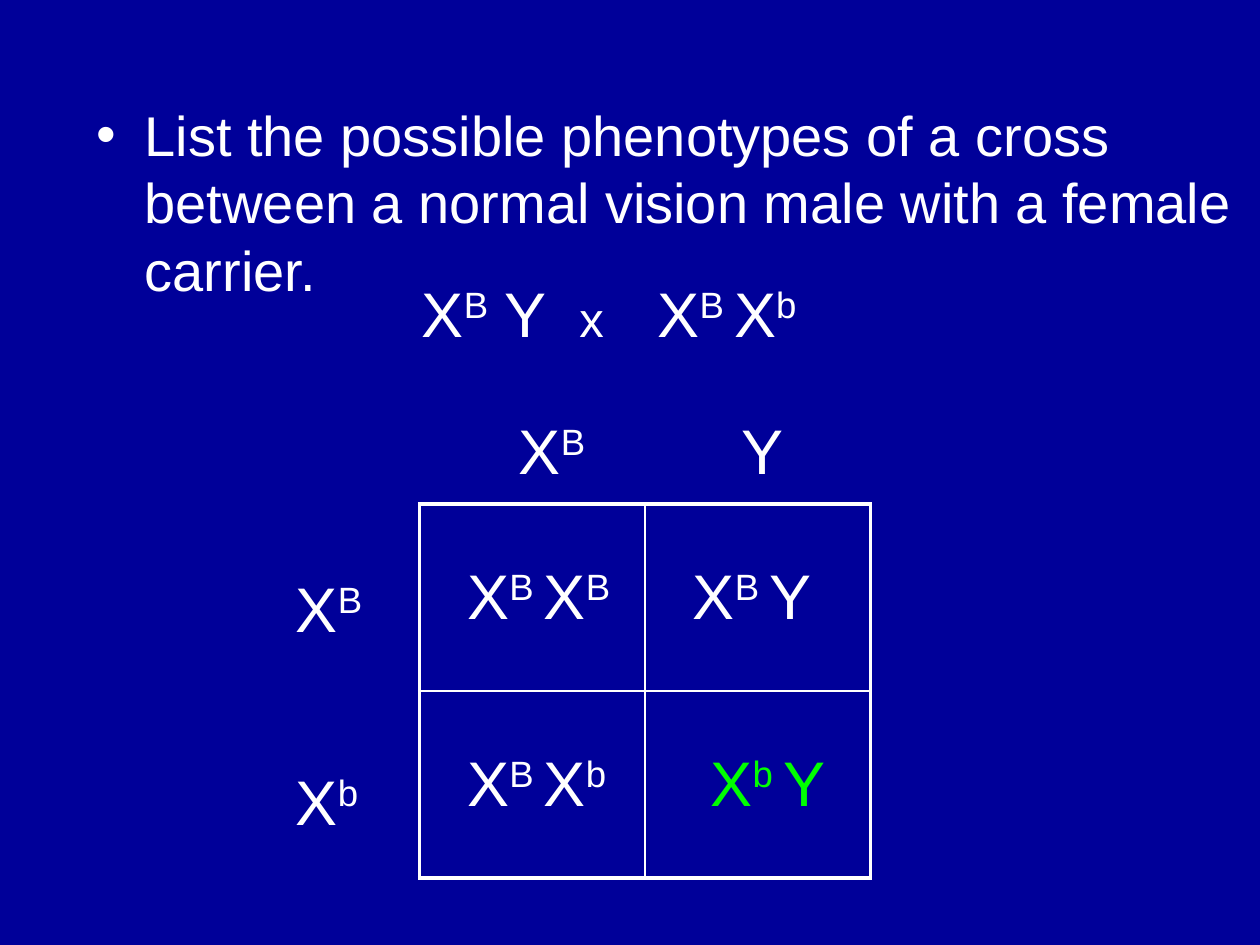
import pptx
import pptx.dml.color
import pptx.enum.text
import pptx.oxml
import pptx.oxml.ns
import pptx.util

Inches, Pt = pptx.util.Inches, pptx.util.Pt
RGB = pptx.dml.color.RGBColor.from_string

THEME = dict(font="Arial", back="000099", ink="FFFFFF", mark="00FF00",
             body=32, gene=36, small=28, thick=2.25, thin=1)

TASK = ("List the possible phenotypes of a cross between a normal vision "
        "male with a female carrier.")
# Braces hold superscripts; each label is place, tab stops, (text, size) parts.
LABELS = [
    ((3.25, 2.13, 3.29, 0.7), (1.25, 1.87),
     [("X{B} Y\t", "gene"), ("x", "small"), ("\tX{B }X{b}", "gene")]),
    ((4.02, 3.22, 2.9, 0.7), (1.77,), [("X{B}\tY", "gene")]),
    ((2.25, 4.47, 0.76, 0.7), (), [("X{B}", "gene")]),
    ((2.25, 6, 0.72, 0.7), (), [("X{b}", "gene")]),
]
# Each cell is text, colour, left margin.
CELLS = [
    [("X{B }X{B}", "ink", 0.38), ("X{B }Y", "ink", 0.38)],
    [("X{B }X{b}", "ink", 0.38), ("X{b }Y", "mark", 0.52)],
]
GRID = (3.33, 4, 3.58, 2.97)


def node(tag, **attrs):
    item = pptx.oxml.parse_xml(f"<a:{tag} {pptx.oxml.ns.nsdecls('a')}/>")
    for key, val in attrs.items():
        item.set(key, str(val))
    return item


def write(para, text, size="gene", color="ink"):
    """Add text to a paragraph, raising what stands in braces."""
    for num, part in enumerate(text.replace("}", "{").split("{")):
        if not part:
            continue
        run = para.add_run()
        run.text = part
        run.font.name = THEME["font"]
        run.font.size = Pt(THEME[size])
        run.font.color.rgb = RGB(THEME[color])
        if num % 2:
            run.font._element.set("baseline", "30000")


def add_box(slide, place):
    box = slide.shapes.add_textbox(*map(Inches, place))
    box.text_frame.word_wrap = True
    return box.text_frame.paragraphs[0]


def add_task(slide):
    para = add_box(slide, (0.67, 0.75, 9.33, 4.5))
    para.space_before = Pt(3)
    props = para._p.get_or_add_pPr()
    props.set("marL", str(Inches(0.38)))
    props.set("indent", str(-Inches(0.38)))
    props.append(node("buFont", typeface=THEME["font"]))
    props.append(node("buChar", char="•"))
    write(para, TASK, size="body")


def add_label(slide, place, stops, parts):
    para = add_box(slide, place)
    if stops:
        tabs = node("tabLst")
        for stop in stops:
            tabs.append(node("tab", pos=Inches(stop), algn="l"))
        para._p.get_or_add_pPr().append(tabs)
    for text, size in parts:
        write(para, text, size=size)


def set_edges(cell, outer):
    """Draw the four borders, thick on the outer sides."""
    props = cell._tc.get_or_add_tcPr()
    for num, side in enumerate("LRTB"):
        width = THEME["thick" if side in outer else "thin"]
        line = node(f"ln{side}", w=Pt(width))
        fill = node("solidFill")
        fill.append(node("srgbClr", val=THEME["ink"]))
        line.append(fill)
        props.insert(num, line)


def add_square(slide):
    table = slide.shapes.add_table(2, 2, *map(Inches, GRID)).table
    table.first_row = table.horz_banding = False
    for row, line in enumerate(CELLS):
        for col, (text, color, left) in enumerate(line):
            cell = table.cell(row, col)
            cell.fill.background()
            cell.margin_left = Inches(left)
            cell.vertical_anchor = pptx.enum.text.MSO_ANCHOR.MIDDLE
            para = cell.text_frame.paragraphs[0]
            para.space_before = Pt(3)
            write(para, text, color=color)
            set_edges(cell, "LR"[col] + "TB"[row])


def main():
    deck = pptx.Presentation()
    deck.slide_width, deck.slide_height = Inches(10), Inches(7.5)
    slide = deck.slides.add_slide(deck.slide_layouts[6])
    slide.background.fill.solid()
    slide.background.fill.fore_color.rgb = RGB(THEME["back"])
    add_task(slide)
    add_square(slide)
    for label in LABELS:
        add_label(slide, *label)
    deck.save("out.pptx")


if __name__ == "__main__":
    main()
